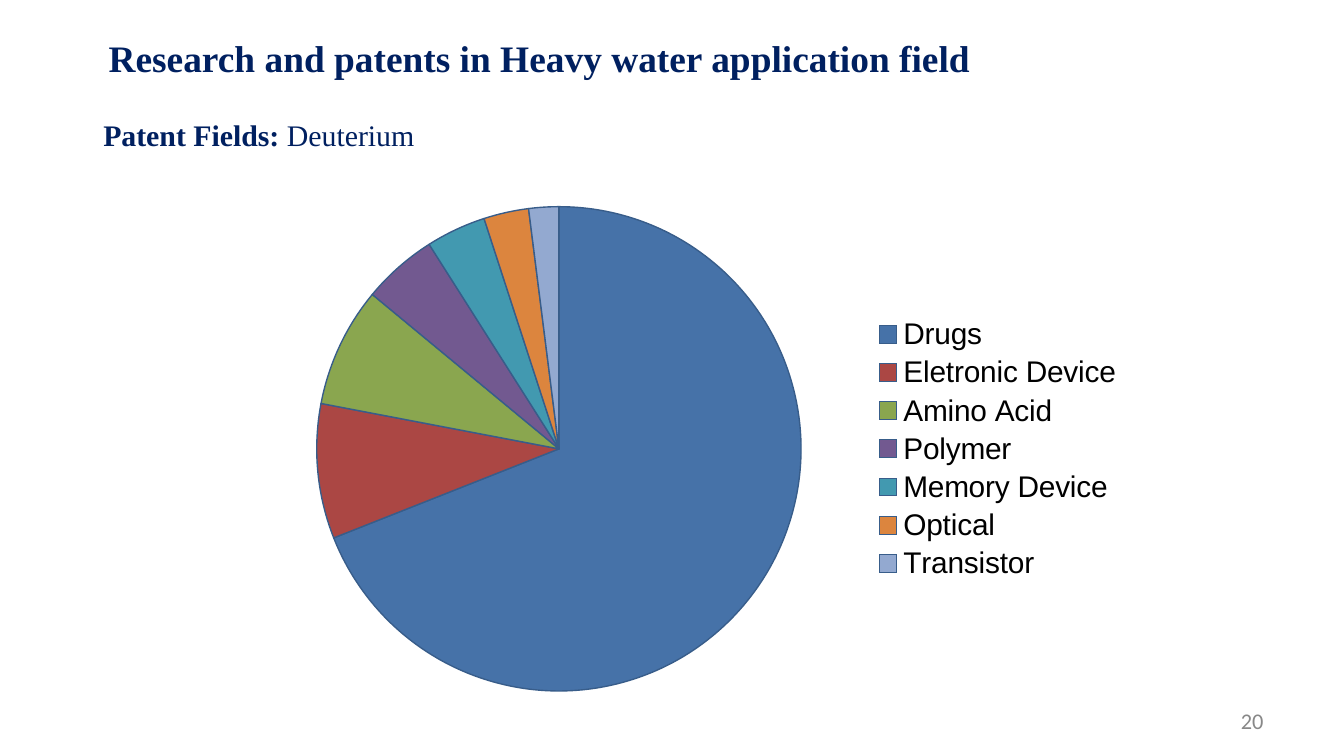
from pptx import Presentation
from pptx.chart.data import CategoryChartData
from pptx.dml.color import RGBColor
from pptx.enum.chart import XL_CHART_TYPE, XL_LEGEND_POSITION
from pptx.enum.text import MSO_ANCHOR, PP_ALIGN
from pptx.util import Inches, Pt

NAVY = RGBColor(0x00, 0x20, 0x60)
GRAY = RGBColor(0x88, 0x88, 0x88)
BLACK = RGBColor(0x00, 0x00, 0x00)
EDGE = RGBColor(0x38, 0x5D, 0x8A)
BLUE = RGBColor(0x46, 0x72, 0xA8)
RED = RGBColor(0xAB, 0x47, 0x44)
GREEN = RGBColor(0x8A, 0xA6, 0x4F)
PURPLE = RGBColor(0x72, 0x59, 0x90)
TEAL = RGBColor(0x42, 0x99, 0xB0)
ORANGE = RGBColor(0xDC, 0x85, 0x3E)
PALE = RGBColor(0x93, 0xA9, 0xD0)

FIELDS = [
    ("Drugs", 69, BLUE),
    ("Eletronic Device", 9, RED),
    ("Amino Acid", 8, GREEN),
    ("Polymer", 5, PURPLE),
    ("Memory Device", 4, TEAL),
    ("Optical", 3, ORANGE),
    ("Transistor", 2, PALE),
]


class Deck:
    serif = "Times New Roman"
    sans = "Arial"

    def __init__(self, slide):
        self.slide = slide

    def text(self, box, runs, size, color=NAVY, font=serif,
             align=PP_ALIGN.LEFT, anchor=MSO_ANCHOR.TOP, pad=0.05):
        shape = self.slide.shapes.add_textbox(*map(Inches, box))
        frame = shape.text_frame
        frame.word_wrap = True
        frame.vertical_anchor = anchor
        frame.margin_top = frame.margin_bottom = Inches(pad)
        para = frame.paragraphs[0]
        para.alignment = align
        for words, bold in runs:
            run = para.add_run()
            run.text = words
            run.font.name = font
            run.font.size = Pt(size)
            run.font.bold = bold
            run.font.color.rgb = color

    def pie(self, box, name, rows, size):
        data = CategoryChartData()
        data.categories = [label for label, _, _ in rows]
        data.add_series(name, [value for _, value, _ in rows])
        frame = self.slide.shapes.add_chart(
            XL_CHART_TYPE.PIE, *map(Inches, box), data)
        chart = frame.chart
        chart.has_title = False
        chart.font.name = self.sans
        chart.font.size = Pt(size)
        chart.font.color.rgb = BLACK
        chart.has_legend = True
        chart.legend.position = XL_LEGEND_POSITION.RIGHT
        chart.legend.include_in_layout = False
        plot = chart.plots[0]
        plot.vary_by_categories = True
        for index, (_, _, color) in enumerate(rows):
            style = plot.series[0].points[index].format
            style.fill.solid()
            style.fill.fore_color.rgb = color
            style.line.color.rgb = EDGE
            style.line.width = Pt(0.75)


def main():
    show = Presentation()
    show.slide_width = Inches(10)
    show.slide_height = Inches(10 * 9 / 16)
    deck = Deck(show.slides.add_slide(show.slide_layouts[6]))
    deck.pie((1.85, 1.4, 6.61, 3.88), "Series 1", FIELDS, 16)
    deck.text((0.67, 0.77, 6.39, 0.55),
              [("Patent Fields: ", True), ("Deuterium", False)], 16, pad=0.1)
    deck.text((0.67, 0.21, 6.69, 0.44),
              [("Research and patents in Heavy water application field", True)],
              20, align=PP_ALIGN.CENTER)
    deck.text((7.17, 5.21, 2.33, 0.3), [("20", False)], 12, GRAY, "Calibri",
              PP_ALIGN.RIGHT, MSO_ANCHOR.MIDDLE)
    show.save("out.pptx")


if __name__ == "__main__":
    main()
